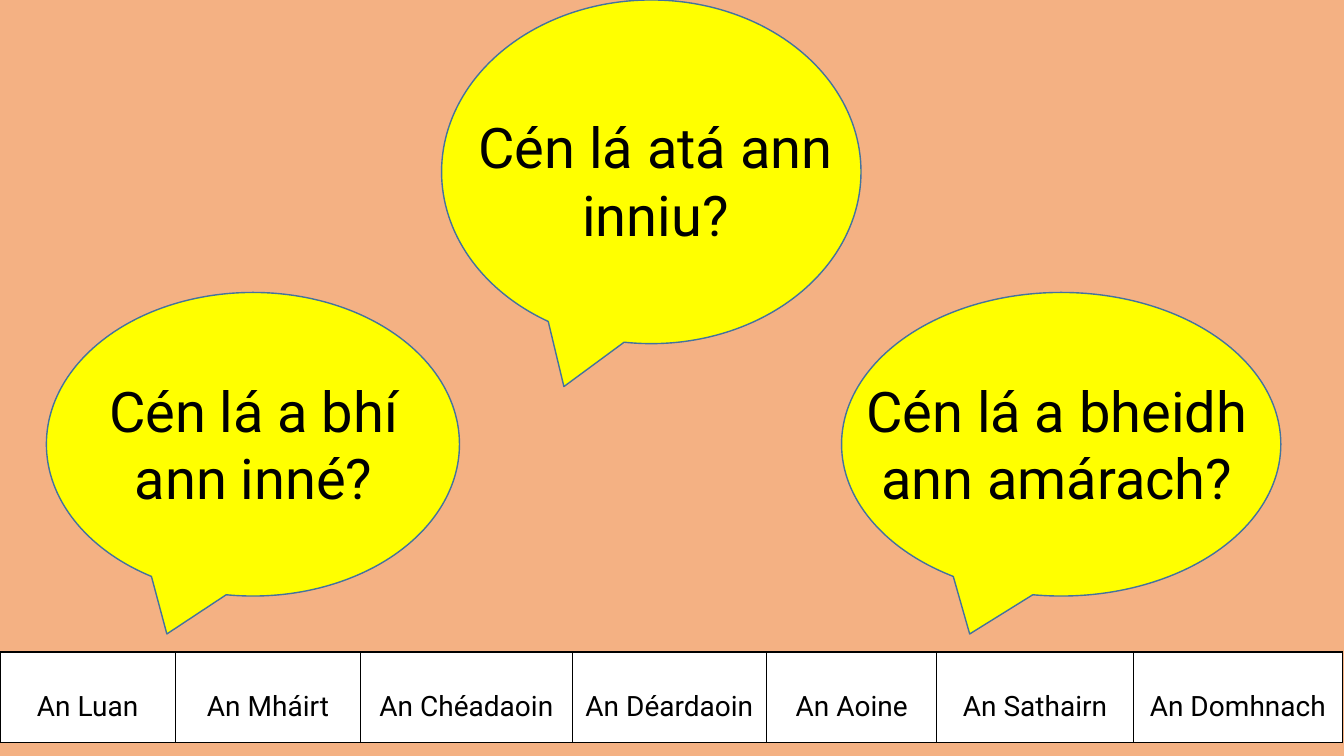
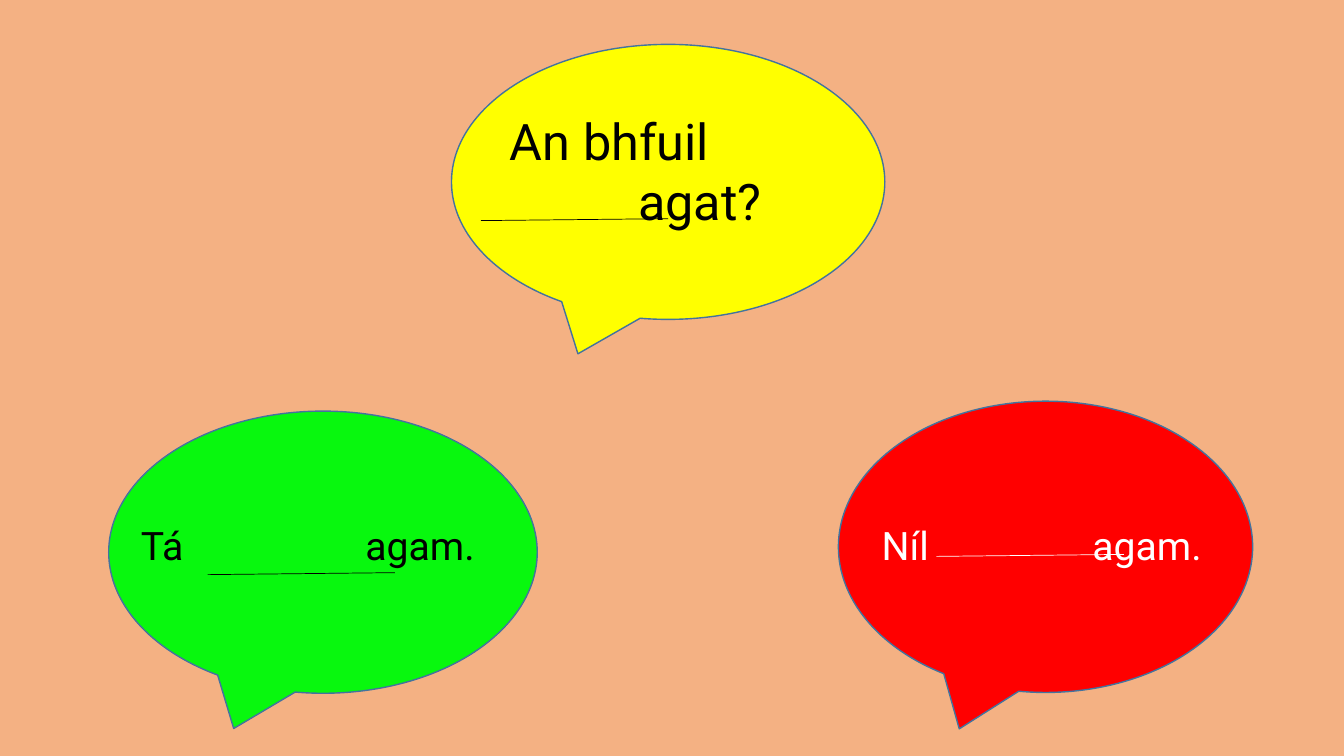
"""Build two Irish conversation slides with speech bubbles and a table of days."""
from lxml import etree
from pptx import Presentation
from pptx import util as u
from pptx.dml.color import RGBColor
from pptx.enum import shapes, text
from pptx.oxml import ns

COLORS = {
    "background": "F4B183",
    "yellow": "FFFF00",
    "green": "08F80E",
    "red": "FF0000",
    "outline": "43739E",
    "black": "000000",
    "white": "FFFFFF",
}
FONT = "Roboto"


def rgb(name):
    return RGBColor.from_string(COLORS[name])


def box(*lengths):
    return [u.Cm(n) for n in lengths]


class Deck:
    def __init__(self):
        self.prs = Presentation()
        self.prs.slide_width, self.prs.slide_height = box(33.87, 19.05)
        self.s = None

    def slide(self):
        self.s = self.prs.slides.add_slide(self.prs.slide_layouts[6])
        fill = self.s.background.fill
        fill.solid()
        fill.fore_color.rgb = rgb("background")

    def style(self, p, size, color, align):
        p.alignment = align
        p.font.name = FONT
        p.font.size = u.Pt(size)
        p.font.color.rgb = rgb(color)

    def bubble(self, left, top, width, height, fill="yellow"):
        sp = self.s.shapes.add_shape(
            shapes.MSO_SHAPE.OVAL_CALLOUT, *box(left, top, width, height))
        sp.shadow.inherit = False
        sp.fill.solid()
        sp.fill.fore_color.rgb = rgb(fill)
        sp.line.color.rgb = rgb("outline")
        sp.line.width = u.Pt(1)

    def textbox(self, left, top, width, height, lines, size,
                color="black", align=text.PP_ALIGN.LEFT, tabs=()):
        tf = self.s.shapes.add_textbox(*box(left, top, width, height)).text_frame
        tf.word_wrap = True
        tf.auto_size = text.MSO_AUTO_SIZE.SHAPE_TO_FIT_TEXT
        tf.text = "\n".join(lines)
        for p in tf.paragraphs:
            self.style(p, size, color, align)
        for p, position in zip(tf.paragraphs, tabs):
            stops = etree.SubElement(p.font._element.getparent(), ns.qn("a:tabLst"))
            etree.SubElement(stops, ns.qn("a:tab"), pos=str(u.Cm(position)), algn="l")
            p.font._element.addprevious(stops)

    def blank_line(self, left, top, color="black"):
        line = self.s.shapes.add_connector(
            shapes.MSO_CONNECTOR.STRAIGHT, *box(left, top, left + 4.72, top - 0.05))
        line.line.color.rgb = rgb(color)
        line.line.width = u.Pt(0.5)
        etree.SubElement(line._element.spPr, ns.qn("a:effectLst"))

    def border(self, cell):
        tc_pr = cell._tc.get_or_add_tcPr()
        for i, side in enumerate(("lnL", "lnR", "lnT", "lnB")):
            ln = etree.Element(ns.qn(f"a:{side}"), w=str(u.Pt(1)))
            fill = etree.SubElement(ln, ns.qn("a:solidFill"))
            etree.SubElement(fill, ns.qn("a:srgbClr"), val=COLORS["black"])
            tc_pr.insert(i, ln)

    def row(self, top, height, widths, labels):
        table = self.s.shapes.add_table(
            1, len(labels), *box(0, top, sum(widths), height)).table
        table.first_row = table.horz_banding = False
        for column, cell, width, label in zip(
                table.columns, table.iter_cells(), widths, labels):
            column.width = u.Cm(width)
            cell.fill.solid()
            cell.fill.fore_color.rgb = rgb("white")
            self.border(cell)
            cell.text = label
            p = cell.text_frame.paragraphs[0]
            self.style(p, 20, "black", text.PP_ALIGN.CENTER)
            p.line_spacing = 2.0
            p.space_before = u.Pt(12)


def days_slide(deck):
    deck.slide()
    questions = (
        ((11.13, 0, 10.57, 8.66), (11.35, 2.72), "Cén lá atá ann inniu?"),
        ((1.17, 7.37, 10.41, 7.65), (1.22, 9.37), "Cén lá a bhí ann inné?"),
        ((21.21, 7.37, 11.07, 7.65), (21.46, 9.37), "Cén lá a bheidh ann amárach?"),
    )
    for outline, corner, question in questions:
        deck.bubble(*outline)
        deck.textbox(*corner, 10.34, 3.68, [question], 40,
                     align=text.PP_ALIGN.CENTER)
    deck.row(16.43, 2.29, (4.42, 4.67, 5.33, 4.9, 4.29, 4.95, 5.27),
             ("An Luan", "An Mháirt", "An Chéadaoin", "An Déardaoin",
              "An Aoine", "An Sathairn", "An Domhnach"))


def having_slide(deck):
    deck.slide()
    deck.bubble(11.38, 1.12, 10.92, 6.93)
    deck.textbox(9.93, 2.64, 11.2, 3.33, ["\tAn bhfuil", "\tagat?"], 36,
                 tabs=(2.67, 5.9))
    deck.bubble(2.74, 10.36, 10.8, 7.11, "green")
    deck.textbox(3.3, 13, 10.67, 1.45, ["Tá\tagam."], 28, tabs=(5.66,))
    deck.bubble(21.13, 10.11, 10.44, 7.34, "red")
    deck.textbox(21.97, 13, 10.49, 1.45, ["Níl\tagam."], 28, "white", tabs=(5.31,))
    deck.blank_line(12.12, 5.56)
    deck.blank_line(5.23, 14.48)
    deck.blank_line(23.6, 14.02, "white")


def main():
    deck = Deck()
    days_slide(deck)
    having_slide(deck)
    deck.prs.save("out.pptx")


if __name__ == "__main__":
    main()
